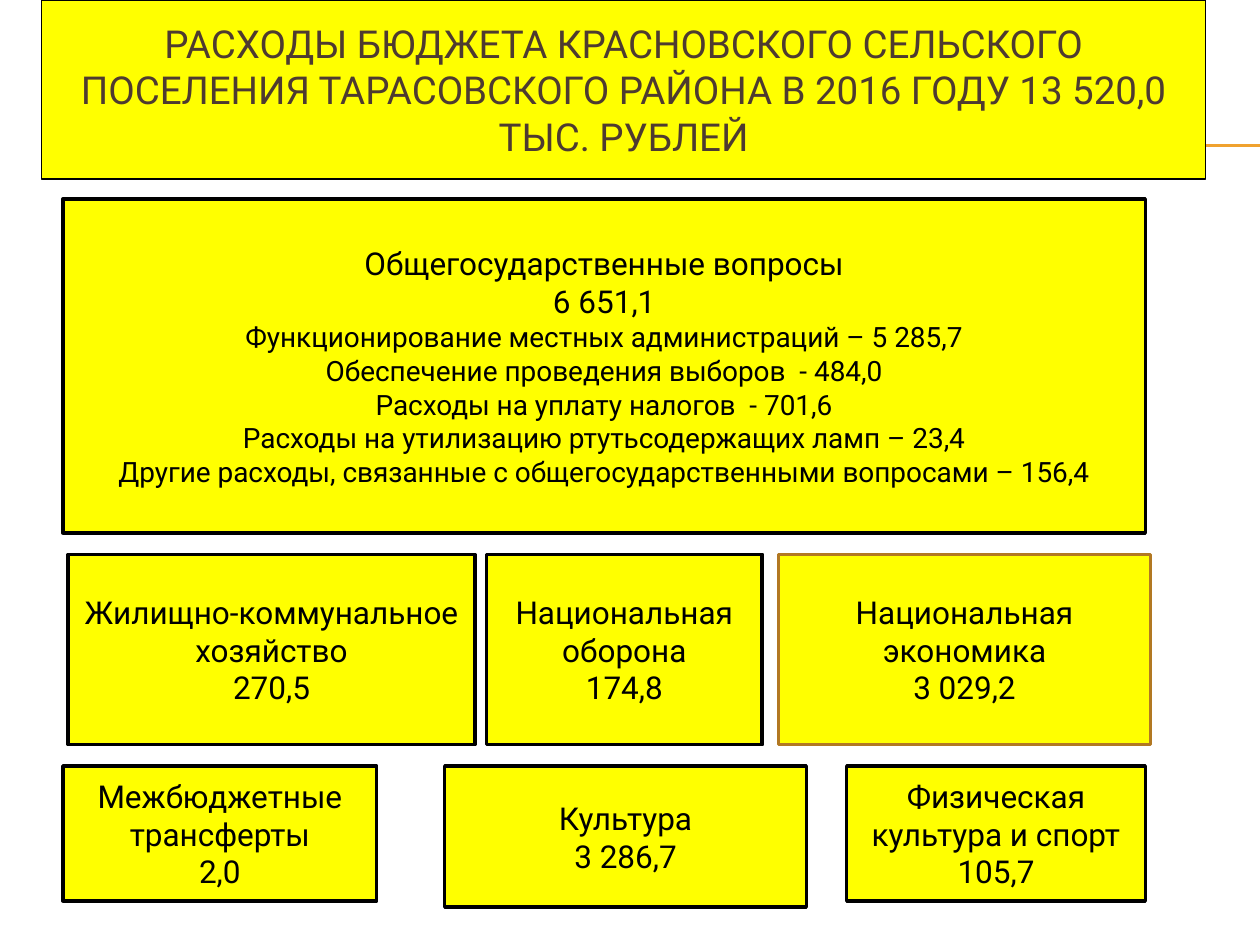
import pptx
import pptx.util
import pptx.dml.color
import pptx.enum.shapes
import pptx.enum.text
import lxml.etree

Inches = pptx.util.Inches
Pt = pptx.util.Pt


def tint(hue):
    return pptx.dml.color.RGBColor.from_string(hue)


def style(box, lines, sizes, ink, edge, width):
    box.fill.solid()
    box.fill.fore_color.rgb = tint("FFFF00")
    box.line.color.rgb = tint(edge)
    box.line.width = Pt(width)
    frame = box.text_frame
    frame.word_wrap = True
    frame.auto_size = pptx.enum.text.MSO_AUTO_SIZE.NONE
    frame.vertical_anchor = pptx.enum.text.MSO_ANCHOR.MIDDLE
    frame.text = "\n".join(lines)
    for para, size in zip(frame.paragraphs, sizes):
        para.alignment = pptx.enum.text.PP_ALIGN.CENTER
        for run in para.runs:
            run.font.name = "Roboto"
            run.font.size = Pt(size)
            run.font.color.rgb = tint(ink)


deck = pptx.Presentation()
deck.slide_width = Inches(10)
deck.slide_height = Inches(7.5)
slide = deck.slides.add_slide(deck.slide_layouts[5])
shapes = slide.shapes

for y in (1.15, 1.16):
    rule = shapes.add_connector(
        pptx.enum.shapes.MSO_CONNECTOR.STRAIGHT,
        Inches(0.56), Inches(y), Inches(10), Inches(y))
    rule.line.color.rgb = tint("F0A22E")
    rule.line.width = Pt(0.75)
    props = rule.element.spPr
    lxml.etree.SubElement(props, pptx.oxml.ns.qn("a:effectLst"))

title = shapes.title
title.left, title.top = Inches(0.33), Inches(0)
title.width, title.height = Inches(9.24), Inches(1.42)
style(title, ["РАСХОДЫ БЮДЖЕТА КРАСНОВСКОГО СЕЛЬСКОГО ПОСЕЛЕНИЯ ТАРАСОВСКОГО "
              "РАЙОНА В 2016 ГОДУ 13 520,0 ТЫС. РУБЛЕЙ"],
      [22], "4E3B30", "000000", 0.75)
shapes.element.append(title.element)

main = ["Общегосударственные вопросы", "6 651,1",
        "Функционирование местных администраций – 5 285,7",
        "Обеспечение проведения выборов  - 484,0",
        "Расходы на уплату налогов  - 701,6",
        "Расходы на утилизацию ртутьсодержащих ламп – 23,4",
        "Другие расходы, связанные с общегосударственными вопросами – 156,4"]
black, brown = "000000", "B27822"
rows = [
    (1.58, [(0.5, 8.59, 2.65, black, main)]),
    (4.4, [
        (0.54, 3.23, 1.51, black, ["Жилищно-коммунальное хозяйство", "270,5"]),
        (3.86, 2.19, 1.51, black, ["Национальная оборона", "174,8"]),
        (6.18, 2.95, 1.51, brown, ["Национальная экономика", "3 029,2"])]),
    (6.08, [
        (0.5, 2.49, 1.07, black, ["Межбюджетные трансферты", "2,0"]),
        (3.53, 2.87, 1.12, black, ["Культура", "3 286,7"]),
        (6.72, 2.37, 1.07, black, ["Физическая культура и спорт", "105,7"])]),
]
for top, cells in rows:
    for left, width, height, edge, lines in cells:
        box = shapes.add_shape(
            pptx.enum.shapes.MSO_SHAPE.RECTANGLE,
            Inches(left), Inches(top), Inches(width), Inches(height))
        box.shadow.inherit = False
        sizes = [18, 18] + [16] * (len(lines) - 2)
        style(box, lines, sizes, black, edge, 2)

deck.save("out.pptx")
